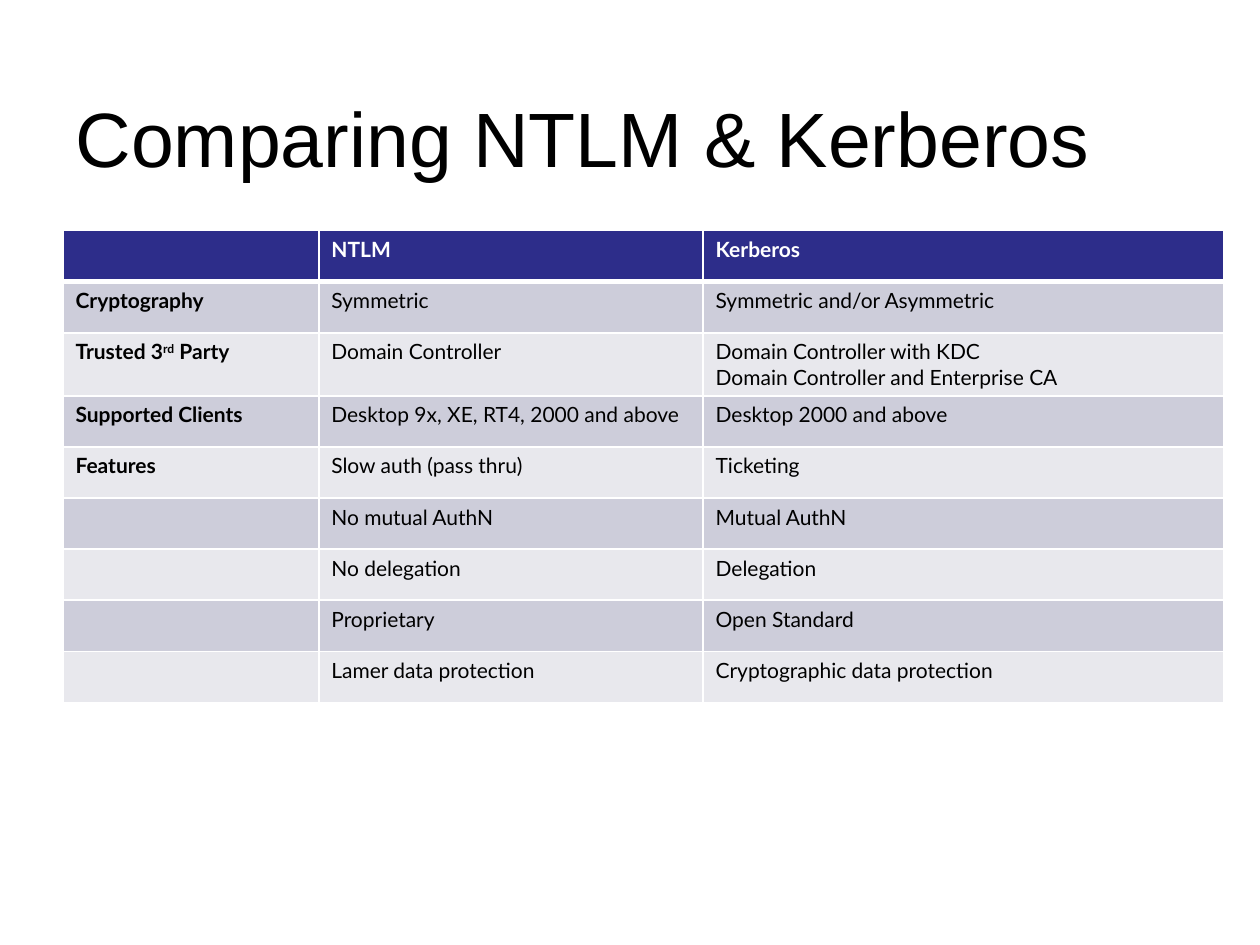
from lxml.etree import SubElement
from pptx import Presentation
from pptx.dml.color import RGBColor
from pptx.enum.text import MSO_ANCHOR, PP_ALIGN
from pptx.oxml.ns import qn
from pptx.util import Inches, Pt

WHITE, BLACK, NAVY = "FFFFFF", "000000", "2D2D8A"
BANDS = ("CDCDDA", "E8E8ED")
COL_WIDTHS = (2.03, 3.05, 4.13)
SUPERSCRIPT = "rd"
ROWS = [
    ("", "NTLM", "Kerberos"),
    ("Cryptography", "Symmetric", "Symmetric and/or Asymmetric"),
    (("Trusted 3", SUPERSCRIPT, " Party"), "Domain Controller",
     "Domain Controller with KDC\vDomain Controller and Enterprise CA"),
    ("Supported Clients", "Desktop 9x, XE, RT4, 2000 and above",
     "Desktop 2000 and above"),
    ("Features", "Slow auth (pass thru)", "Ticketing"),
    ("", "No mutual AuthN", "Mutual AuthN"),
    ("", "No delegation", "Delegation"),
    ("", "Proprietary", "Open Standard"),
    ("", "Lamer data protection", "Cryptographic data protection"),
]


def rgb(value):
    """Turn a hex string into a colour."""
    return RGBColor.from_string(value)


def set_font(font, color, **formats):
    """Apply a colour and a dict of format values to a font."""
    font.color.rgb = rgb(color)
    for name, value in formats.items():
        setattr(font, name, value)


def set_borders(cell, widths):
    """Draw white borders with the given point width for each side."""
    tc_pr = cell._tc.get_or_add_tcPr()
    for side, width in widths.items():
        ln = SubElement(tc_pr, qn(f"a:ln{side}"), w=str(Pt(width)))
        fill = SubElement(ln, qn("a:solidFill"))
        SubElement(fill, qn("a:srgbClr"), val=WHITE)


def add_title(slide, text, left, top, width, height):
    """Place and format the title placeholder."""
    title = slide.shapes.title
    title.left, title.top = Inches(left), Inches(top)
    title.width, title.height = Inches(width), Inches(height)
    tf = title.text_frame
    tf.text = text
    tf.vertical_anchor = MSO_ANCHOR.MIDDLE
    p = tf.paragraphs[0]
    p.alignment = PP_ALIGN.LEFT
    set_font(p.runs[0].font, BLACK, name="Arial", size=Pt(44), bold=False)


def fill_cell(cell, content, color, bold):
    """Write one cell, raising the ordinal suffix."""
    p = cell.text_frame.paragraphs[0]
    if isinstance(content, str):
        p.text = content
    else:
        for part in content:
            r = p.add_run()
            r.text = part
            if part == SUPERSCRIPT:
                r._r.get_or_add_rPr().set("baseline", "30000")
    for r in p.runs:
        set_font(r.font, color, name="Lato", size=Pt(12), bold=bold)
    if not p.runs:
        set_font(p.font, color, name="Lato", size=Pt(12))


def add_comparison(slide, left, top, width, height):
    """Add the banded comparison table."""
    frame = slide.shapes.add_table(len(ROWS), len(COL_WIDTHS), Inches(left),
                                   Inches(top), Inches(width), Inches(height))
    table = frame.table
    for column, col_width in zip(table.columns, COL_WIDTHS):
        column.width = Inches(col_width)
    for i, row in enumerate(ROWS):
        header = i == 0
        widths = {"L": 1, "R": 1, "T": 3 if i == 1 else 1, "B": 3 if header else 1}
        for j, content in enumerate(row):
            cell = table.cell(i, j)
            fill_cell(cell, content, WHITE if header else BLACK, header or j == 0)
            set_borders(cell, widths)
            cell.fill.solid()
            cell.fill.fore_color.rgb = rgb(NAVY if header else BANDS[(i - 1) % 2])


def main():
    """Build and save the slide."""
    prs = Presentation()
    prs.slide_width, prs.slide_height = Inches(10), Inches(7.5)
    slide = prs.slides.add_slide(prs.slide_layouts[5])
    add_title(slide, "Comparing NTLM & Kerberos", 0.5, 0.67, 8.83, 0.83)
    add_comparison(slide, 0.5, 1.83, sum(COL_WIDTHS), 3.65)
    prs.save("out.pptx")


if __name__ == "__main__":
    main()
